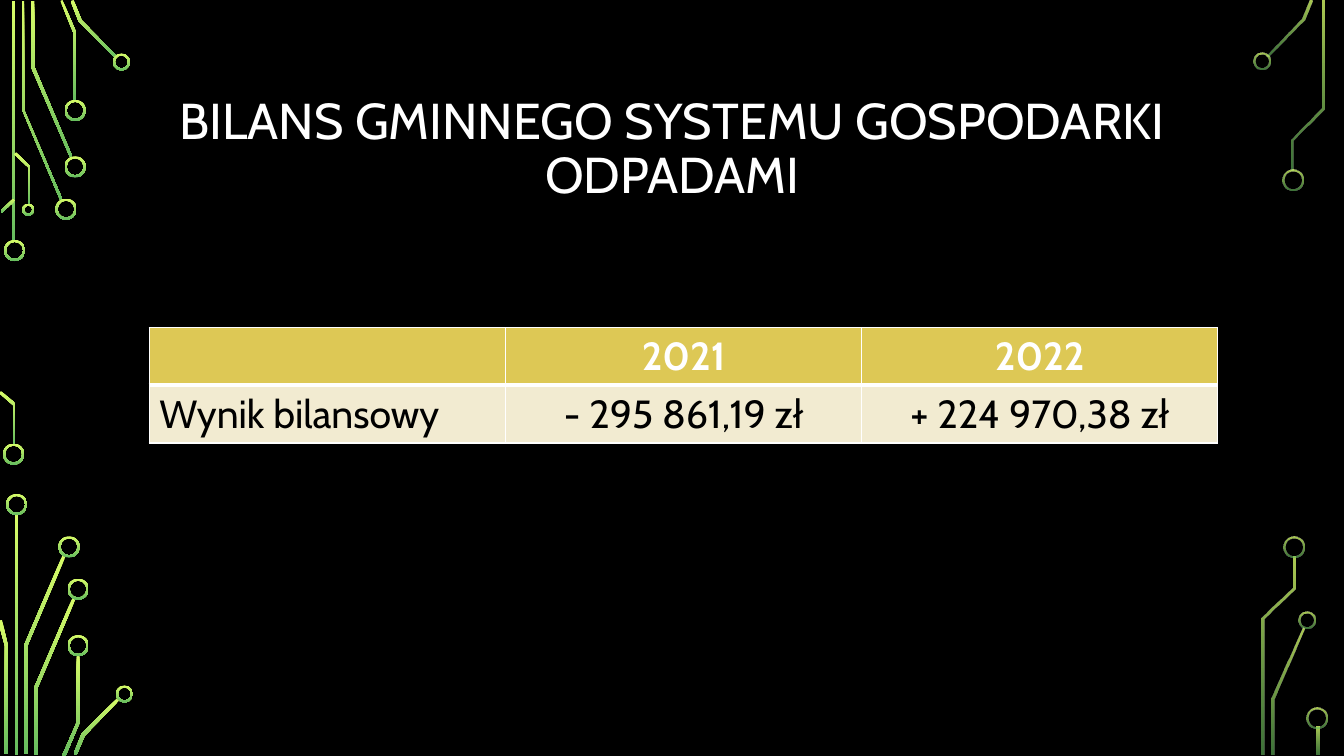
from lxml import etree
from pptx import Presentation
from pptx.dml.color import RGBColor
from pptx.enum import shapes, text
from pptx.oxml import ns
from pptx.util import Inches, Pt


def rgb(code):
    return RGBColor.from_string(code)


def glow(shape, dim):
    shape.shadow.inherit = False
    shape.line.fill.background()
    shape.fill.gradient()
    shape.fill.gradient_angle = 270
    for stop, code in zip(shape.fill.gradient_stops, ("D8FC68", "66BD5F")):
        stop.color.rgb = rgb(code)
    if dim:
        for tint, level in zip(shape.element.iter(ns.qn("a:srgbClr")), (80, 60)):
            etree.SubElement(tint, ns.qn("a:alpha"), val=str(level * 1000))


deck = Presentation()
deck.slide_width, deck.slide_height = Inches(13.33), Inches(7.5)
slide = deck.slides.add_slide(deck.slide_layouts[5])
slide.background.fill.solid()
slide.background.fill.fore_color.rgb = rgb("000000")
items = slide.shapes
middle = 6.67

bars = [(0.12, 0.01, 2.39), (0.15, 5.1, 2.39), (13.06, 7.21, 0.28)]
for left, top, high in bars:
    bar = items.add_shape(shapes.MSO_SHAPE.RECTANGLE, Inches(left), Inches(top), Inches(0.03), Inches(high))
    glow(bar, left > middle)

traces = [
    [(0.6, 1.99), (0.22, 1.09), (0.22, 0.01), (0.24, 0.01), (0.24, 1.09), (0.62, 1.98)],
    [(0.7, 1.57), (0.31, 0.67), (0.31, 0.01), (0.34, 0.01), (0.34, 0.66), (0.72, 1.56)],
    [(0.76, 1), (0.73, 1), (0.73, 0.33), (0.6, 0.01), (0.62, 0), (0.76, 0.33)],
    [(1.15, 0.58), (0.78, 0.21), (0.7, 0.01), (0.73, 0), (0.81, 0.2), (1.16, 0.56)],
    [(0.02, 2.11), (0.01, 2.09), (0.13, 1.97), (0.15, 1.99)],
    [(0.15, 4.41), (0.13, 4.41), (0.13, 4.02), (-0.01, 3.9), (0.01, 3.88), (0.15, 4)],
    [(0.3, 2.03), (0.28, 2.03), (0.28, 1.66), (0.14, 1.53), (0.16, 1.51), (0.3, 1.65)],
    [(0.27, 7.48), (0.24, 7.48), (0.24, 6.4), (0.62, 5.51), (0.65, 5.52), (0.27, 6.41)],
    [(0.08, 7.48), (0.05, 7.48), (0.05, 6.41), (-0.02, 6.16), (0.02, 6.15), (0.08, 6.41)],
    [(0.37, 7.49), (0.34, 7.49), (0.34, 6.82), (0.72, 5.93), (0.75, 5.94), (0.37, 6.83)],
    [(0.65, 7.5), (0.62, 7.49), (0.76, 7.17), (0.76, 6.5), (0.79, 6.5), (0.79, 7.17)],
    [(0.76, 7.49), (0.73, 7.48), (0.81, 7.28), (1.17, 6.92), (1.19, 6.94), (0.84, 7.3)],
    [(12.58, 0.56), (12.56, 0.55), (12.91, 0.19), (12.99, 0), (13.02, 0.01), (12.94, 0.2)],
    [(12.64, 7.49), (12.61, 7.49), (12.61, 6.93), (12.92, 6.23), (12.94, 6.24), (12.64, 6.94)],
    [(12.83, 1.69), (12.81, 1.69), (12.81, 1.38), (13.11, 1.07), (13.11, 0.01),
     (13.14, 0.01), (13.14, 1.08), (12.83, 1.39)],
    [(12.54, 7.49), (12.51, 7.49), (12.51, 6.13), (12.82, 5.83), (12.82, 5.52),
     (12.85, 5.52), (12.85, 5.84), (12.54, 6.14)],
]
for trace in traces:
    points = [(Inches(x), Inches(y)) for x, y in trace]
    path = items.build_freeform(*points[0])
    path.add_line_segments(points[1:])
    glow(path.convert_to_shape(), trace[0][0] > middle)

rings = {
    0.21: [(0.04, 2.38), (0.03, 4.4), (0.55, 1.97), (0.64, 1.55), (0.64, 0.99), (0.06, 4.9), (0.58, 5.32),
           (0.67, 5.74), (0.67, 6.3), (12.72, 1.68), (12.73, 5.32), (12.96, 7.02)],
    0.17: [(1.12, 0.53), (1.15, 6.8), (12.43, 0.52), (12.88, 6.07)],
    0.12: [(0.22, 2.02)],
}
for size, spots in rings.items():
    for left, top in spots:
        ring = items.add_shape(shapes.MSO_SHAPE.DONUT, Inches(left), Inches(top), Inches(size), Inches(size))
        ring.adjustments[0] = 0.02 / size
        glow(ring, left > middle)

title = items.title
title.left, title.top, title.width, title.height = Inches(1.25), Inches(0.68), Inches(10.83), Inches(1.62)
frame = title.text_frame
frame.word_wrap = True
frame.auto_size = text.MSO_AUTO_SIZE.NONE
frame.vertical_anchor = text.MSO_ANCHOR.MIDDLE
head = frame.paragraphs[0]
head.alignment = text.PP_ALIGN.CENTER
head.line_spacing = 0.9
run = head.add_run()
run.text = "BILANS GMINNEGO SYSTEMU GOSPODARKI ODPADAMI"
run.font.name, run.font.size = "Cabin", Pt(36)
run.font.color.rgb = rgb("FFFFFF")

rows = [["", "2021", "2022"], ["Wynik bilansowy", "- 295 861,19 zł", "+ 224 970,38 zł"]]
looks = [("DDC855", "FFFFFF", True), ("F2EBD1", "000000", False)]
edges = [{"L": 1, "R": 1, "T": 1, "B": 3}, {"L": 1, "R": 1, "T": 3, "B": 1}]
table = items.add_table(2, 3, Inches(1.48), Inches(3.25), Inches(10.6), Inches(1.13)).table
for y, (row, (back, ink, bold)) in enumerate(zip(rows, looks)):
    for x, words in enumerate(row):
        cell = table.cell(y, x)
        props = cell._tc.get_or_add_tcPr()
        for side, width in edges[y].items():
            edge = etree.SubElement(props, ns.qn("a:ln" + side), w=str(Pt(width)))
            solid = etree.SubElement(edge, ns.qn("a:solidFill"))
            etree.SubElement(solid, ns.qn("a:srgbClr"), val="FFFFFF")
        cell.fill.solid()
        cell.fill.fore_color.rgb = rgb(back)
        if words:
            line = cell.text_frame.paragraphs[0]
            line.alignment = text.PP_ALIGN.CENTER if x else text.PP_ALIGN.LEFT
            run = line.add_run()
            run.text = words
            run.font.name, run.font.size, run.font.bold = "Cabin", Pt(28), bold
            run.font.color.rgb = rgb(ink)

deck.save("out.pptx")
